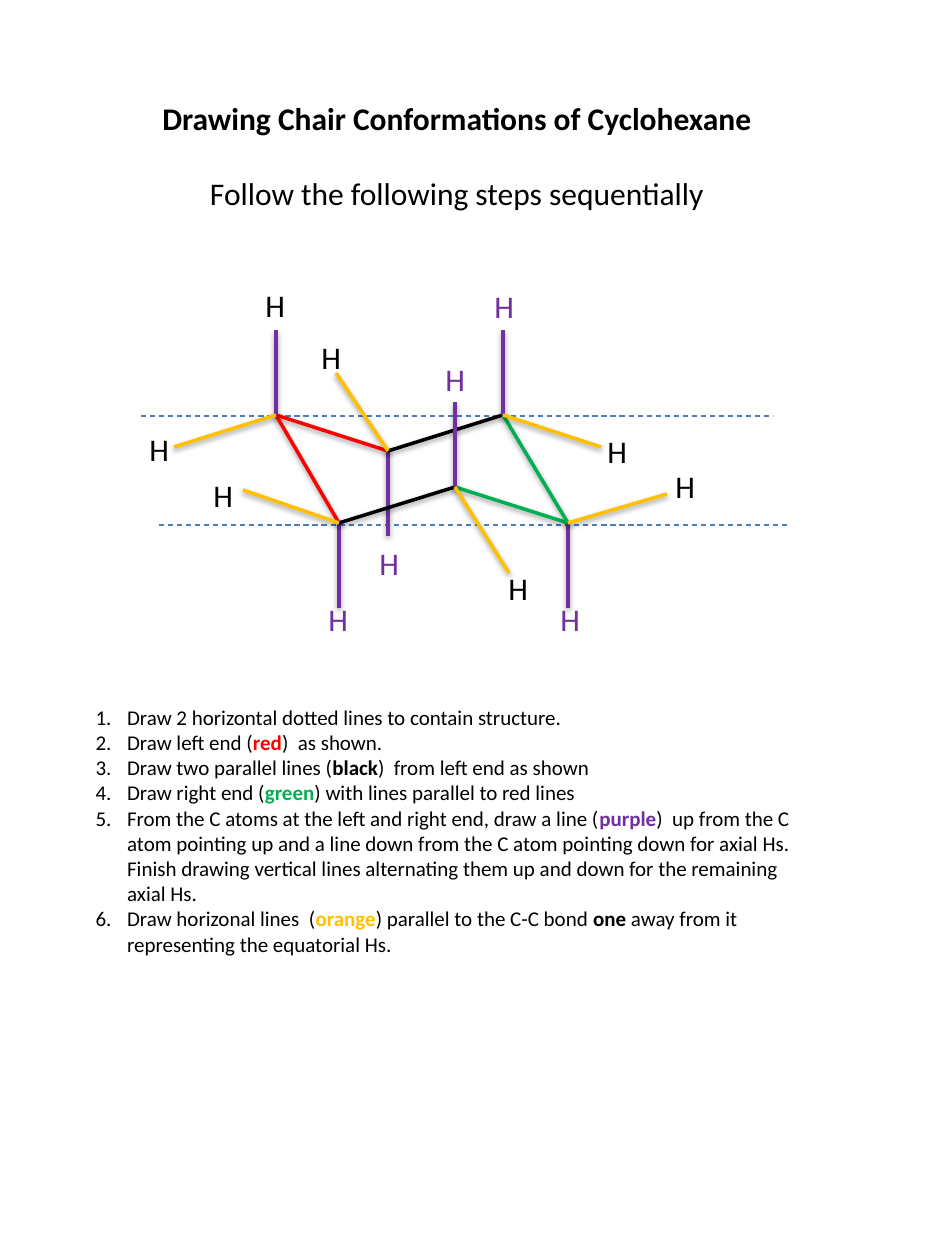
import pptx
import pptx.util
import pptx.dml.color
import pptx.enum.dml
import pptx.enum.shapes
import pptx.enum.text
import pptx.oxml
import pptx.oxml.ns

PX = 914400 // 126
FONT = "Calibri"
COLORS = {"black": "000000", "red": "FF0000", "green": "00B050",
          "purple": "7030A0", "orange": "FFC000", "blue": "4B7EBC"}

TITLE = [("Drawing Chair Conformations of Cyclohexane", True),
         ("Follow the following steps sequentially", False)]

# Each step is a list of (text, colour, bold) runs.
STEPS = [
    [("Draw 2 horizontal dotted lines to contain structure.", "black", False)],
    [("Draw left end (", "black", False), ("red", "red", True),
     (")  as shown.", "black", False)],
    [("Draw two parallel lines (", "black", False), ("black", "black", True),
     (")  from left end as shown", "black", False)],
    [("Draw right end (", "black", False), ("green", "green", True),
     (") with lines parallel to red lines", "black", False)],
    [("From the C atoms at the left and right end, draw a line (", "black", False),
     ("purple", "purple", True),
     (")  up from the C atom pointing up and a line down from the C atom pointing "
      "down for axial Hs.  Finish drawing vertical lines alternating them up and "
      "down for the remaining axial Hs.", "black", False)],
    [("Draw horizonal lines  (", "black", False), ("orange", "orange", True),
     (") parallel to the C-C bond ", "black", False), ("one", "black", True),
     (" away from it  representing the equatorial Hs.", "black", False)],
]

GUIDES = [((141, 416), (773, 416)), ((159, 525), (790, 525))]
CARBONS = {"left": (276, 415), "lower left": (339, 523), "upper mid": (388, 451),
           "lower mid": (455, 487), "upper right": (503, 415), "right": (568, 523)}
RING = [("left", "upper mid", "red"), ("left", "lower left", "red"),
        ("lower left", "lower mid", "black"), ("upper mid", "upper right", "black"),
        ("lower mid", "right", "green"), ("upper right", "right", "green")]
AXIAL_LENGTH = 85
UP = ["left", "lower mid", "upper right"]
DOWN = ["lower left", "upper mid", "right"]
EQUATORIAL_ENDS = {"left": (174, 447), "lower left": (243, 490),
                   "upper mid": (336, 373), "lower mid": (509, 573),
                   "upper right": (601, 447), "right": (667, 494)}
# Centres of the H labels
H_LABELS = {
    "black": [(275, 305), (331, 357), (159, 449), (223, 495),
              (617, 451), (685, 486), (518, 588)],
    "purple": [(504, 306), (455, 379), (389, 563), (338, 619), (570, 619)],
}
H_SIZE = (45, 50)

SHADOW = ('<a:outerShdw blurRad="40000" dist="20000" dir="5400000" rotWithShape="0">'
          '<a:srgbClr val="000000"><a:alpha val="38000"/></a:srgbClr></a:outerShdw>')


def rgb(name):
    return pptx.dml.color.RGBColor.from_string(COLORS[name])


def add_run(p, text, size, color="black", bold=False):
    r = p.add_run()
    r.text = text
    r.font.name, r.font.size, r.font.bold = FONT, pptx.util.Pt(size), bold
    r.font.color.rgb = rgb(color)


def add_line(start, end, color, width=2, shadow=SHADOW):
    c = s.shapes.add_connector(pptx.enum.shapes.MSO_CONNECTOR.STRAIGHT,
                               *(v * PX for v in start + end))
    c.line.color.rgb = rgb(color)
    c.line.width = pptx.util.Pt(width)
    c._element.spPr.append(pptx.oxml.parse_xml(
        f'<a:effectLst {pptx.oxml.ns.nsdecls("a")}>{shadow}</a:effectLst>'))
    return c


def add_axial(carbon, direction):
    x, y = CARBONS[carbon]
    add_line((x, y), (x, y + direction * AXIAL_LENGTH), "purple")


def place(sp, left, top, width, height):
    sp.left, sp.top, sp.width, sp.height = (v * PX for v in (left, top, width, height))
    tf = sp.text_frame
    tf.auto_size = pptx.enum.text.MSO_AUTO_SIZE.NONE
    tf.vertical_anchor = pptx.enum.text.MSO_ANCHOR.TOP
    tf.word_wrap = True
    return tf


def add_paragraph(tf, index):
    return tf.add_paragraph() if index else tf.paragraphs[0]


prs = pptx.Presentation()
prs.slide_width, prs.slide_height = pptx.util.Inches(7.5), pptx.util.Inches(10)
s = prs.slides.add_slide(prs.slide_layouts[1])

tf = place(s.shapes.title, 137, 93, 640, 127)
for i, (text, bold) in enumerate(TITLE):
    p = add_paragraph(tf, i)
    p.alignment = pptx.enum.text.PP_ALIGN.CENTER
    p.space_before = pptx.util.Pt(21 * i)
    add_run(p, text, 18, bold=bold)

tf = place(s.placeholders[1], 83, 698, 733, 267)
for i, step in enumerate(STEPS):
    p = add_paragraph(tf, i)
    p.space_before = pptx.util.Pt(0)
    pPr = p._p.get_or_add_pPr()
    pPr.set("marL", "228600")
    pPr.set("indent", "-228600")
    pPr.append(pptx.oxml.parse_xml(
        f'<a:buFont {pptx.oxml.ns.nsdecls("a")} typeface="+mj-lt"/>'))
    pPr.append(pptx.oxml.parse_xml(
        f'<a:buAutoNum {pptx.oxml.ns.nsdecls("a")} type="arabicPeriod"/>'))
    for text, color, bold in step:
        add_run(p, text, 12, color, bold)

for start, end in GUIDES:
    guide = add_line(start, end, "blue", 0.75, shadow="")
    guide.line.dash_style = pptx.enum.dml.MSO_LINE.DASH

for carbon in DOWN:
    add_axial(carbon, 1)
for a, b, color in RING:
    add_line(CARBONS[a], CARBONS[b], color)
for carbon in UP:
    add_axial(carbon, -1)
for carbon, end in EQUATORIAL_ENDS.items():
    add_line(CARBONS[carbon], end, "orange")

w, h = H_SIZE
for color, centres in H_LABELS.items():
    for x, y in centres:
        box = s.shapes.add_textbox(0, 0, 0, 0)
        tf = place(box, x - w // 2, y - h // 2, w, h)
        tf.word_wrap = False
        add_run(tf.paragraphs[0], "H", 18, color)

prs.save("out.pptx")
